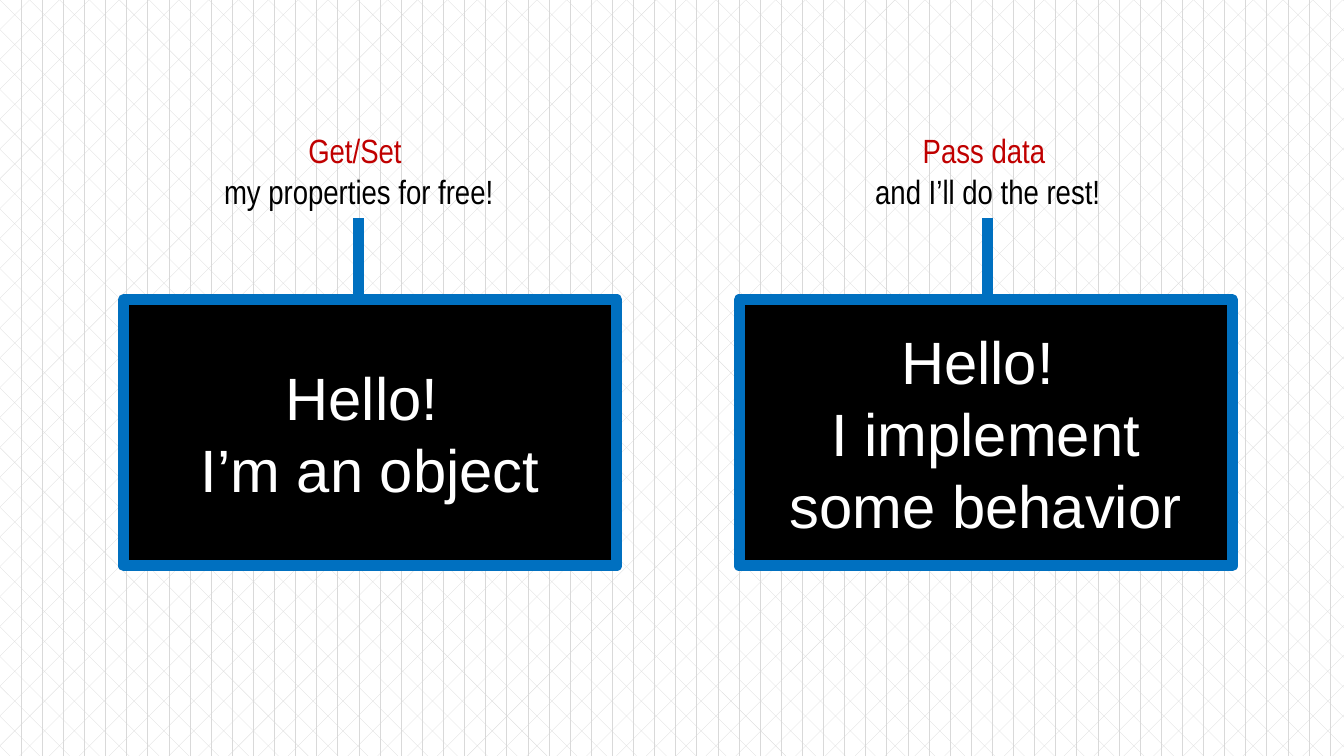
"""Build a slide of two talking objects, each with a caption on a stem."""
from pptx import Presentation
from pptx.dml.color import RGBColor
from pptx.enum import dml, shapes, text
from pptx.oxml.ns import qn
from pptx.util import Inches, Pt
from lxml import etree

COLORS = {"box": "000000", "blue": "0070C0", "red": "C00000", "black": "000000",
          "white": "FFFFFF", "grid": "D9D9D9"}
OBJECTS = [
    {"left": 0.92, "stem": 2.67, "caption_width": 2.53,
     "caption": ["Get/Set ", "my properties for free!"],
     "speech": ["Hello! ", "I’m an object"]},
    {"left": 5.5, "stem": 7.35, "caption_width": 2.1,
     "caption": ["Pass data ", "and I’ll do the rest!"],
     "speech": ["Hello! ", "I implement some behavior"]},
]
BOX_TOP, BOX_W, BOX_H = 2.23, 3.67, 1.98
CAPTION_TOP, CAPTION_H = 0.92, 0.71
STEM_TOP, STEM_BOTTOM = 1.62, 2.21


def rgb(name):
    return RGBColor.from_string(COLORS[name])


def write(tf, lines, font, size, colors):
    tf.text = "\n".join(lines)
    for p, color in zip(tf.paragraphs, colors):
        p.alignment = text.PP_ALIGN.CENTER
        p.font.name, p.font.size = font, Pt(size)
        p.font.color.rgb = rgb(color)


def outline(sp):
    sp.line.color.rgb = rgb("blue")
    sp.line.width = Pt(6)


def add_box(s, item):
    sp = s.shapes.add_shape(shapes.MSO_SHAPE.RECTANGLE, Inches(item["left"]),
                            Inches(BOX_TOP), Inches(BOX_W), Inches(BOX_H))
    sp.shadow.inherit = False
    sp.fill.solid()
    sp.fill.fore_color.rgb = rgb("box")
    outline(sp)
    tf = sp.text_frame
    tf.word_wrap = True
    tf.vertical_anchor = text.MSO_ANCHOR.MIDDLE
    write(tf, item["speech"], "Arial", 32, ["white", "white"])


def add_caption(s, item):
    width = item["caption_width"]
    sp = s.shapes.add_textbox(Inches(item["stem"] - width / 2), Inches(CAPTION_TOP),
                              Inches(width), Inches(CAPTION_H))
    tf = sp.text_frame
    tf.word_wrap = False
    tf.auto_size = text.MSO_AUTO_SIZE.SHAPE_TO_FIT_TEXT
    write(tf, item["caption"], "Arial Narrow", 18, ["red", "black"])


def add_stem(s, item):
    x = Inches(item["stem"])
    sp = s.shapes.add_connector(shapes.MSO_CONNECTOR.STRAIGHT,
                                x, Inches(STEM_BOTTOM), x, Inches(STEM_TOP))
    outline(sp)
    etree.SubElement(sp._element.spPr, qn("a:effectLst"))


def main():
    prs = Presentation()
    prs.slide_width = Inches(10)
    prs.slide_height = Inches(10 * 9 / 16)
    s = prs.slides.add_slide(prs.slide_layouts[6])
    fill = s.background.fill
    fill.patterned()
    fill.pattern = dml.MSO_PATTERN.DIVOT
    fill.fore_color.rgb = rgb("grid")
    fill.back_color.rgb = rgb("white")
    for item in OBJECTS:
        add_box(s, item)
        add_caption(s, item)
        add_stem(s, item)
    prs.save("out.pptx")


if __name__ == "__main__":
    main()
